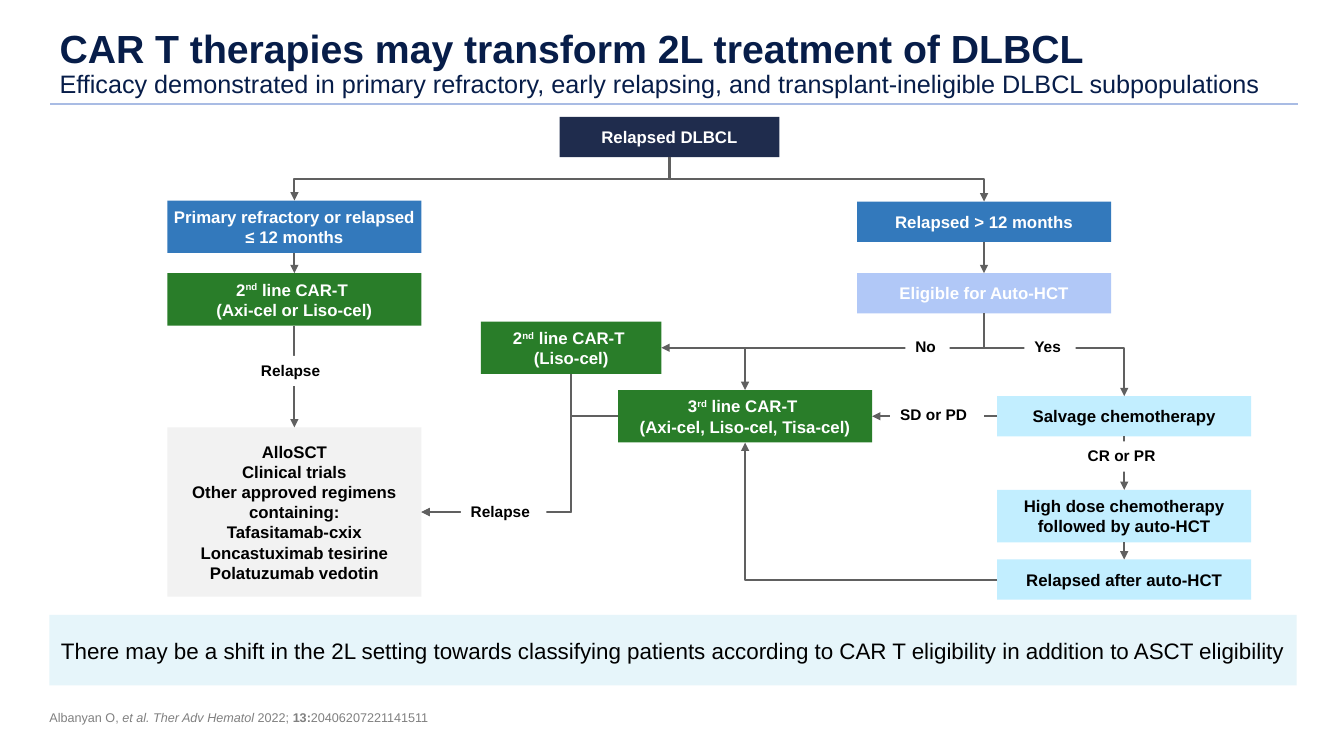
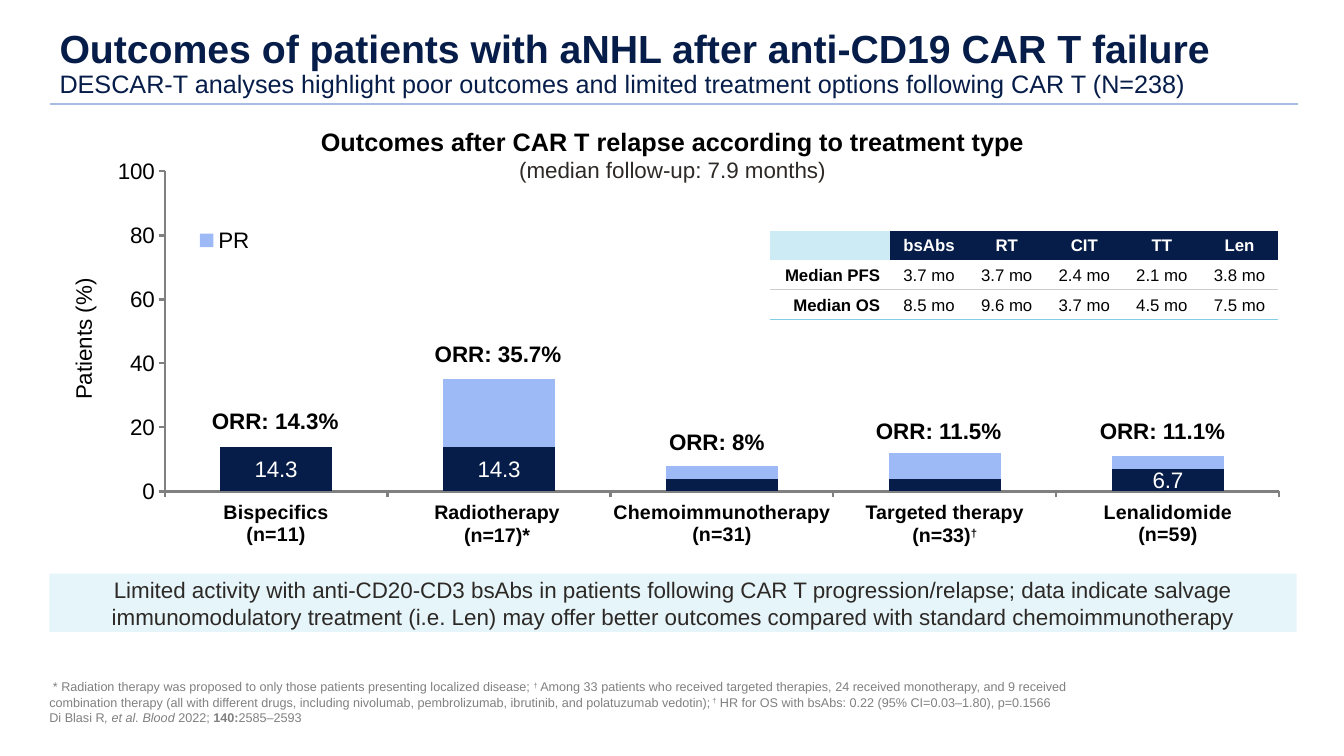
from copy import deepcopy
from dataclasses import dataclass

from lxml.etree import SubElement
from pptx import Presentation
from pptx.chart.data import CategoryChartData
from pptx.dml.color import RGBColor
from pptx.enum.chart import XL_CHART_TYPE as ChartType, XL_TICK_MARK as Tick
from pptx.enum.shapes import MSO_CONNECTOR as Connector, MSO_SHAPE as Shape
from pptx.enum.text import MSO_ANCHOR as Anchor, MSO_AUTO_SIZE as AutoSize, PP_ALIGN as Align
from pptx.oxml.ns import qn
from pptx.util import Inches, Pt

NAVY, ROOT_NAVY, BLUE, PERIWINKLE, PR_BLUE, GREEN, SKY, BAND, CORNER = map(RGBColor.from_string, (
    "071D49", "1F2C4D", "3379BC", "B1C8F7", "9DBAF6", "297D29", "C2EEFF", "E6F5FA", "CDEBF5"))
RULE, ARROW, GREY, PALE_GREY, CHARCOAL, BLACK, WHITE, ROW_LINE, END_LINE = map(RGBColor.from_string, (
    "A9BCE4", "606060", "808080", "F2F2F2", "2D2926", "000000", "FFFFFF", "CCCCCC", "82CDE6"))
FONT = "Arial"
LEFT, WIDTH, NOTE_BOTTOM = 0.49, 12.37, 7.19
NO_TABLE_STYLE = "{2D5ABB26-0587-4C30-8999-92F81FD0307C}"
TOP_SITE, LEFT_SITE, BOTTOM_SITE, RIGHT_SITE = range(4)


@dataclass
class Run:
    """Text with its departures from the style of its box; a newline is a line break."""
    text: str
    bold: bool = None
    italic: bool = False
    size: float = None
    color: RGBColor = None
    sup: bool = False


def write(paragraph, runs, size, color=BLACK, bold=False, align=Align.LEFT, spacing=None):
    paragraph.alignment, paragraph.line_spacing = align, spacing
    for item in runs:
        part = item if isinstance(item, Run) else Run(item)
        for number, line in enumerate(part.text.split("\n")):
            if number:
                paragraph.add_line_break()
                paragraph._p[-1].append(deepcopy(run._r.rPr))
            if not line:
                continue
            run = paragraph.add_run()
            run.text, font = line, run.font
            font.name, font.size, font.italic = FONT, Pt(part.size or size), part.italic
            font.bold = bold if part.bold is None else part.bold
            font.color.rgb = part.color or color
            if part.sup:
                run._r.rPr.set("baseline", "30000")


def site_point(box, site):
    x, y = box.left + box.width // 2, box.top + box.height // 2
    return ((x, box.top), (box.left, y), (x, box.top + box.height), (box.left + box.width, y))[site]


def set_layout(element, position, x, y, w, h, **target):
    """Place a chart part by shares of the chart's size."""
    for old in element.findall(qn("c:layout")):
        element.remove(old)
    layout = SubElement(element, qn("c:layout"))
    element.insert(position, layout)
    manual = SubElement(layout, qn("c:manualLayout"))
    for tag, value in {**target, "xMode": "edge", "yMode": "edge", "x": x, "y": y, "w": w, "h": h}.items():
        SubElement(manual, qn("c:" + tag), val=str(value))


class Deck:
    def __init__(self):
        self.prs = Presentation()
        self.prs.slide_width, self.prs.slide_height = Inches(13.33), Inches(7.5)
        self.slide = None

    def new_slide(self, title, subtitle):
        self.slide = self.prs.slides.add_slide(self.prs.slide_layouts[5])
        holder = self.slide.shapes.title
        holder.left, holder.top, holder.width, holder.height = map(Inches, (LEFT, 0.33, WIDTH, 0.7))
        frame = holder.text_frame
        frame.auto_size, frame.word_wrap, frame.vertical_anchor = AutoSize.NONE, True, Anchor.BOTTOM
        write(frame.paragraphs[0], [title + "\n", Run(subtitle, bold=False, size=18)], 28, NAVY, True, spacing=0.9)
        y = Inches(1.03)
        rule = self.slide.shapes.add_connector(Connector.STRAIGHT, Inches(0.5), y, Inches(12.87), y)
        self.style_line(rule, RULE, 1.1)

    def style_line(self, line, color, width):
        line.line.color.rgb, line.line.width = color, Pt(width)
        SubElement(line._element.spPr, qn("a:effectLst"))

    def text(self, x, y, w, h, paragraphs, size, color=BLACK, bold=False, align=Align.CENTER,
             anchor=Anchor.TOP, inset=(0.1, 0.05), wrap=True, fill=None):
        place = [Inches(v) for v in (x, y, w, h)]
        if fill is None:
            box = self.slide.shapes.add_textbox(*place)
        else:
            box = self.slide.shapes.add_shape(Shape.RECTANGLE, *place)
            box.shadow.inherit = False
            box.fill.solid()
            box.fill.fore_color.rgb = fill
            box.line.fill.background()
        frame = box.text_frame
        frame.word_wrap, frame.vertical_anchor = wrap, anchor
        frame.margin_left = frame.margin_right = Inches(inset[0])
        frame.margin_top = frame.margin_bottom = Inches(inset[1])
        for number, runs in enumerate(paragraphs):
            paragraph = frame.add_paragraph() if number else frame.paragraphs[0]
            write(paragraph, runs, size, color, bold, align)
        return box

    def box(self, x, y, w, h, fill, *runs, color=WHITE, size=12, bold=True):
        return self.text(x, y, w, h, [runs], size, color, bold, anchor=Anchor.MIDDLE, inset=(0, 0), fill=fill)

    def takeaway(self, y, h, message, color):
        self.box(LEFT, y, WIDTH, h, BAND, message, color=color, size=16, bold=False)

    def footnote(self, w, h, *paragraphs):
        self.text(LEFT, NOTE_BOTTOM - h, w, h, paragraphs, 9, GREY, align=Align.LEFT,
                  anchor=Anchor.BOTTOM, inset=(0, 0), wrap=False)

    def arrow(self, source, start, target, end, share=0.5):
        """Glued arrow; it bends at a share of its first direction unless the sites line up."""
        (x1, y1), (x2, y2) = site_point(source, start), site_point(target, end)
        straight = min(abs(x2 - x1), abs(y2 - y1)) < Inches(0.02)
        line = self.slide.shapes.add_connector(Connector.STRAIGHT if straight else Connector.ELBOW, x1, y1, x2, y2)
        line.begin_connect(source, start)
        line.end_connect(target, end)
        if not straight:
            self.bend(line, x1, y1, x2 - x1, y2 - y1, start, end, share)
        self.style_line(line, ARROW, 1.5)
        SubElement(line.line._get_or_add_ln(), qn("a:tailEnd"), type="triangle")

    def bend(self, line, x, y, dx, dy, start, end, share):
        """Turn an elbow so that it leaves downwards or to the left."""
        if start == BOTTOM_SITE:
            w, h = abs(dy), abs(dx)
            turn, flip_h, flip_v = (90, 0, 0) if dx < 0 else (270, 1, 0)
        else:
            w, h = abs(dx), abs(dy)
            turn, flip_h, flip_v = 180, 0, int(dy > 0)
        line.left, line.top = int(x + (dx - w) / 2), int(y + (dy - h) / 2)
        line.width, line.height = w, h
        xfrm = line._element.spPr.find(qn("a:xfrm"))
        for key, value in (("rot", turn * 60000), ("flipH", flip_h), ("flipV", flip_v)):
            xfrm.set(key, str(value))
        geometry = line._element.spPr.find(qn("a:prstGeom"))
        if (start + end) % 2:
            geometry.set("prst", "bentConnector2")
        else:
            guide = f"val {round(share * 100000)}"
            SubElement(geometry.find(qn("a:avLst")), qn("a:gd"), name="adj1", fmla=guide)

    def table(self, x, y, widths, row_height, rows, borders):
        table = self.slide.shapes.add_table(len(rows), len(widths), Inches(x), Inches(y), Inches(sum(widths)),
                                            Inches(row_height * len(rows))).table
        table.first_row = table.horz_banding = False
        table._tbl.tblPr.find(qn("a:tableStyleId")).text = NO_TABLE_STYLE
        for column, width in zip(table.columns, widths):
            column.width = Inches(width)
        for r, row in enumerate(rows):
            table.rows[r].height = Inches(row_height)
            for c, value in enumerate(row):
                self.fill_cell(table.cell(r, c), value, r == 0, c == 0, borders[r])

    def fill_cell(self, cell, value, header, stub, border):
        cell.vertical_anchor = Anchor.MIDDLE
        cell.margin_top = cell.margin_bottom = Inches(0.04)
        cell.fill.background()
        if header:
            cell.fill.solid()
            cell.fill.fore_color.rgb = CORNER if stub else NAVY
        paragraph = cell.text_frame.paragraphs[0]
        if value:
            write(paragraph, [value], 12, WHITE if header else BLACK, header or stub,
                  Align.RIGHT if stub else Align.CENTER, None if header else 1.07)
        else:
            SubElement(paragraph._p, qn("a:endParaRPr"), sz="1200")
        if border:
            properties = cell._tc.get_or_add_tcPr()
            line = SubElement(properties, qn("a:lnB"), w=str(Pt(1)))
            SubElement(SubElement(line, qn("a:solidFill")), qn("a:srgbClr"), val=str(border))
            properties.insert(0, line)

    def stacked_chart(self, x, y, w, h, categories, series):
        data = CategoryChartData()
        data.categories = categories
        for name, values, _ in series:
            data.add_series(name, values)
        place = [Inches(v) for v in (x, y, w, h)]
        chart = self.slide.shapes.add_chart(ChartType.COLUMN_STACKED, *place, data).chart
        chart.has_title = False
        chart.font.name, chart.font.size, chart.font.color.rgb = FONT, Pt(16), BLACK
        plot = chart.plots[0]
        plot.gap_width, plot.overlap, plot.vary_by_categories = 100, 100, False
        for drawn, (_, _, color) in zip(plot.series, series):
            drawn.format.fill.solid()
            drawn.format.fill.fore_color.rgb = color
        scale = chart.value_axis
        for axis in (chart.category_axis, scale):
            axis.has_major_gridlines = False
            axis.major_tick_mark, axis.minor_tick_mark = Tick.OUTSIDE, Tick.NONE
            axis.format.line.color.rgb, axis.format.line.width = GREY, Pt(1.5)
        names = chart.category_axis.tick_labels.font
        names.size, names.bold = Pt(14), True
        scale.minimum_scale, scale.maximum_scale, scale.major_unit = 0, 100, 20
        scale.tick_labels.number_format, scale.tick_labels.number_format_is_linked = "0", False
        return chart


def pathway_slide(deck):
    deck.new_slide("CAR T therapies may transform 2L treatment of DLBCL", "Efficacy demonstrated in primary "
                   "refractory, early relapsing, and transplant-ineligible DLBCL subpopulations")
    deck.takeaway(6.1, 0.7, "There may be a shift in the 2L setting towards classifying patients "
                  "according to CAR T eligibility in addition to ASCT eligibility", BLACK)
    low, tall, wide = 0.4, 0.52, 2.52
    early_x, late_x, chemo_x = 1.66, 8.5, 9.89
    nd, rd = Run("nd", sup=True), Run("rd", sup=True)
    root = deck.box(5.55, 1.16, 2.18, low, ROOT_NAVY, "Relapsed DLBCL")
    early = deck.box(early_x, 1.99, wide, tall, BLUE, "Primary refractory or relapsed ≤ 12 months")
    second = deck.box(early_x, 2.71, wide, tall, GREEN, "2", nd, " line CAR-T \n(Axi-cel or Liso-cel)")
    late = deck.box(late_x, 2, wide, low, BLUE, "Relapsed > 12 months")
    eligible = deck.box(late_x, 2.71, wide, low, PERIWINKLE, "Eligible for Auto-HCT")
    liso = deck.box(4.77, 3.19, 1.79, tall, GREEN, "2", nd, " line CAR-T \n(Liso-cel)")
    options = deck.box(early_x, 4.24, wide, 1.68, PALE_GREY, "AlloSCT\nClinical trials\nOther approved regimens "
                       "containing:\nTafasitamab-cxix\nLoncastuximab tesirine\nPolatuzumab vedotin", color=BLACK)
    third = deck.box(6.13, 3.87, wide, tall, GREEN, "3", rd, " line CAR-T \n(Axi-cel, Liso-cel, Tisa-cel)")
    salvage, high_dose, after_hct = (
        deck.box(chemo_x, y, wide, h, SKY, step, color=BLACK) for y, h, step in (
            (3.93, low, "Salvage chemotherapy"), (4.86, tall, "High dose chemotherapy followed by auto-HCT"),
            (5.55, low, "Relapsed after auto-HCT")))
    for upper, lower in ((root, early), (root, late), (early, second), (second, options), (late, eligible),
                         (salvage, high_dose), (high_dose, after_hct)):
        deck.arrow(upper, BOTTOM_SITE, lower, TOP_SITE)
    deck.arrow(eligible, BOTTOM_SITE, salvage, TOP_SITE, 0.42)
    deck.arrow(eligible, BOTTOM_SITE, third, TOP_SITE, 0.45)
    deck.arrow(liso, BOTTOM_SITE, options, RIGHT_SITE)
    deck.arrow(eligible, BOTTOM_SITE, liso, RIGHT_SITE)
    deck.arrow(salvage, LEFT_SITE, third, RIGHT_SITE)
    deck.arrow(after_hct, LEFT_SITE, third, BOTTOM_SITE)
    deck.arrow(third, LEFT_SITE, options, RIGHT_SITE, 0.24)
    for x, y, w, label in ((2.49, 3.53, 0.85, "Relapse"), (4.57, 4.93, 0.85, "Relapse"), (8.98, 3.3, 0.44, "No"),
                           (10.16, 3.3, 0.51, "Yes"), (8.83, 3.97, 0.93, "SD or PD"), (10.69, 4.38, 0.94, "CR or PR")):
        deck.text(x, y, w, 0.3, [[label]], 11, bold=True, align=Align.LEFT, wrap=False, fill=WHITE)
    deck.footnote(3.81, 0.15, ["Albanyan O, ", Run("et al. Ther Adv Hematol", italic=True), " 2022; ",
                               Run("13:", bold=True), "20406207221141511"])


def outcomes_slide(deck):
    deck.new_slide("Outcomes of patients with aNHL after anti-CD19 CAR T failure", "DESCAR-T analyses highlight "
                   "poor outcomes and limited treatment options following CAR T (N=238)")
    deck.takeaway(5.69, 0.58, "Limited activity with anti-CD20-CD3 bsAbs in patients following CAR T "
                  "progression/relapse; data indicate salvage immunomodulatory treatment (i.e. Len) "
                  "may offer better outcomes compared with standard chemoimmunotherapy", CHARCOAL)
    chart = deck.stacked_chart(
        0.8, 1.5, 11.9, 4.02, ["Bispecifics\n(n=11)", "Radiotherapy\n(n=17)", "Chemoimmunotherapy\n(n=31)",
                               "Targeted therapy\n(n=33)", "Lenalidomide\n(n=59)"],
        [("Series 1", (14, 14, 4, 4, 7), NAVY), ("PR", (0, 21, 4, 8, 4), PR_BLUE)])
    responses = chart.plots[0].series[0]
    responses.data_labels.show_value = False
    for index, rate in ((0, "14.3"), (1, "14.3"), (4, "6.7")):
        frame = responses.points[index].data_label.text_frame
        write(frame.paragraphs[0], [rate], 16, WHITE, align=Align.CENTER)
    set_layout(chart._chartSpace.chart.plotArea, 0, 0.07, 0.05, 0.93, 0.79, layoutTarget="inner")
    chart.has_legend = True
    chart.legend.include_in_layout = False
    legend = chart.legend._element
    entry = SubElement(legend, qn("c:legendEntry"))
    SubElement(entry, qn("c:idx"), val="0")
    SubElement(entry, qn("c:delete"), val="1")
    legend.insert(1, entry)
    set_layout(legend, 2, 0.08, 0.17, 0.08, 0.1)
    for x, name in ((4.04, ["Radiotherapy\n(n=17)*"]), (8.48, ["Targeted therapy\n(n=33)", Run("†", sup=True)])):
        deck.text(x, 4.91, 1.78, 0.57, [name], 14, bold=True, fill=WHITE)
    deck.text(-0.83, 3.14, 3.39, 0.45, [["Patients (%)"]], 16).rotation = 270
    for center, y, rate in ((2.73, 3.99, "14.3%"), (4.94, 3.32, "35.7%"), (7.11, 4.2, "8%"),
                            (9.31, 4.09, "11.5%"), (11.53, 4.09, "11.1%")):
        deck.text(center - 0.85, y, 1.7, 0.42, [["ORR: " + rate]], 16, bold=True)
    deck.table(7.64, 2.29, [1.19] + [0.77] * 5, 0.29, [
        ["", "bsAbs", "RT", "CIT", "TT", "Len"], ["Median PFS", "3.7 mo", "3.7 mo", "2.4 mo", "2.1 mo", "3.8 mo"],
        ["Median OS", "8.5 mo", "9.6 mo", "3.7 mo", "4.5 mo", "7.5 mo"]], [None, ROW_LINE, END_LINE])
    deck.text(2.98, 1.25, 7.38, 0.58, [["Outcomes after CAR T relapse according to treatment type\n", Run(
        "(median follow-up: 7.9 months)", bold=False, size=16, color=CHARCOAL)]], 18, bold=True, inset=(0.1, 0))
    deck.footnote(
        10.2, 0.45,
        [" * Radiation therapy was proposed to only those patients presenting localized disease; ",
         Run("†", sup=True), " Among 33 patients who received targeted therapies, 24 received monotherapy, and 9 "
         "received\ncombination therapy (all with different drugs, including nivolumab, pembrolizumab, ibrutinib, "
         "and polatuzumab vedotin);", Run(" †", sup=True), " HR for OS with bsAbs: 0.22 (95% CI=0.03–1.80), p=0.1566"],
        ["Di Blasi R", Run(", et al. Blood ", italic=True), "2022; ", Run("140:", bold=True), "2585–2593"])


if __name__ == "__main__":
    clinical_deck = Deck()
    pathway_slide(clinical_deck)
    outcomes_slide(clinical_deck)
    clinical_deck.prs.save("out.pptx")
